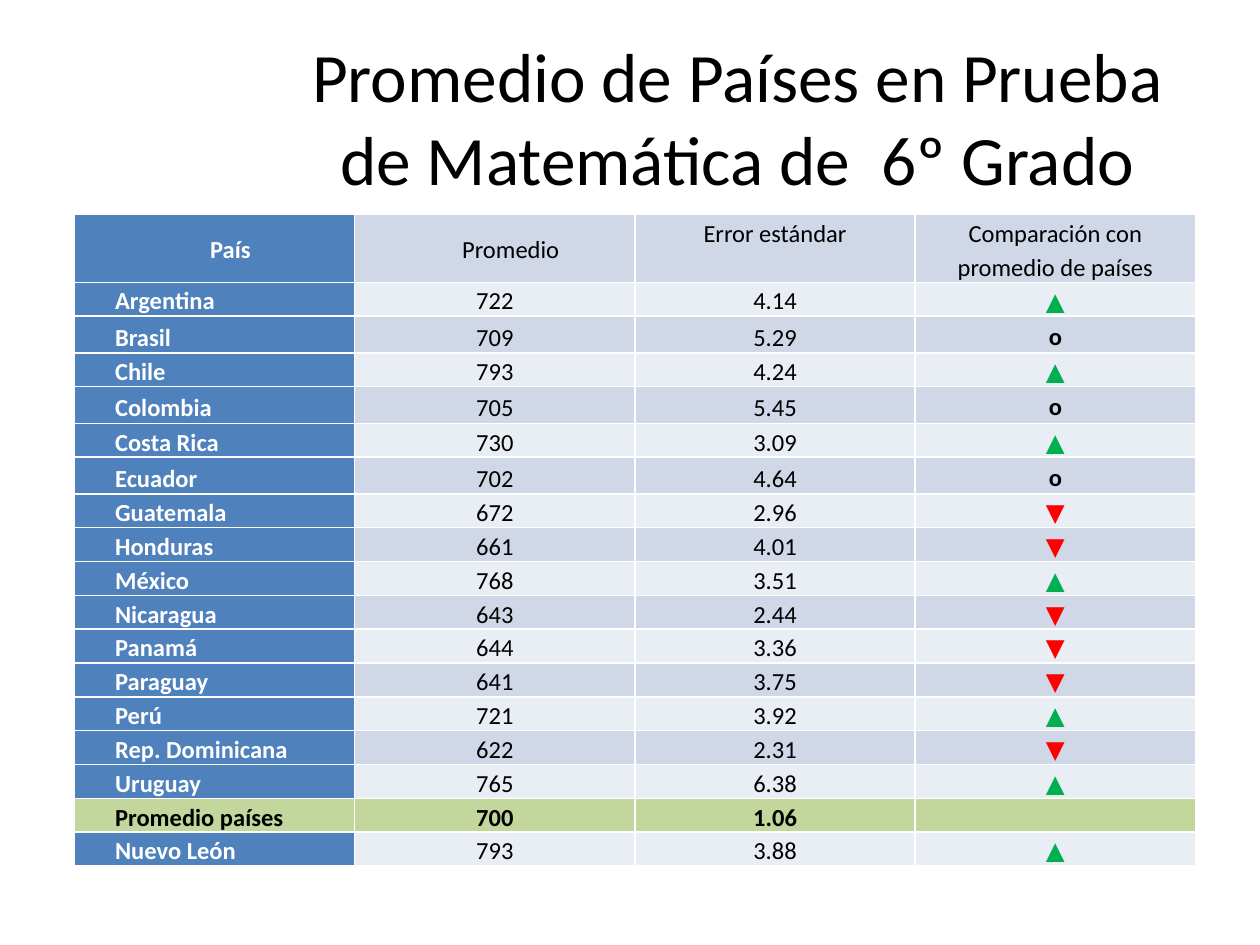
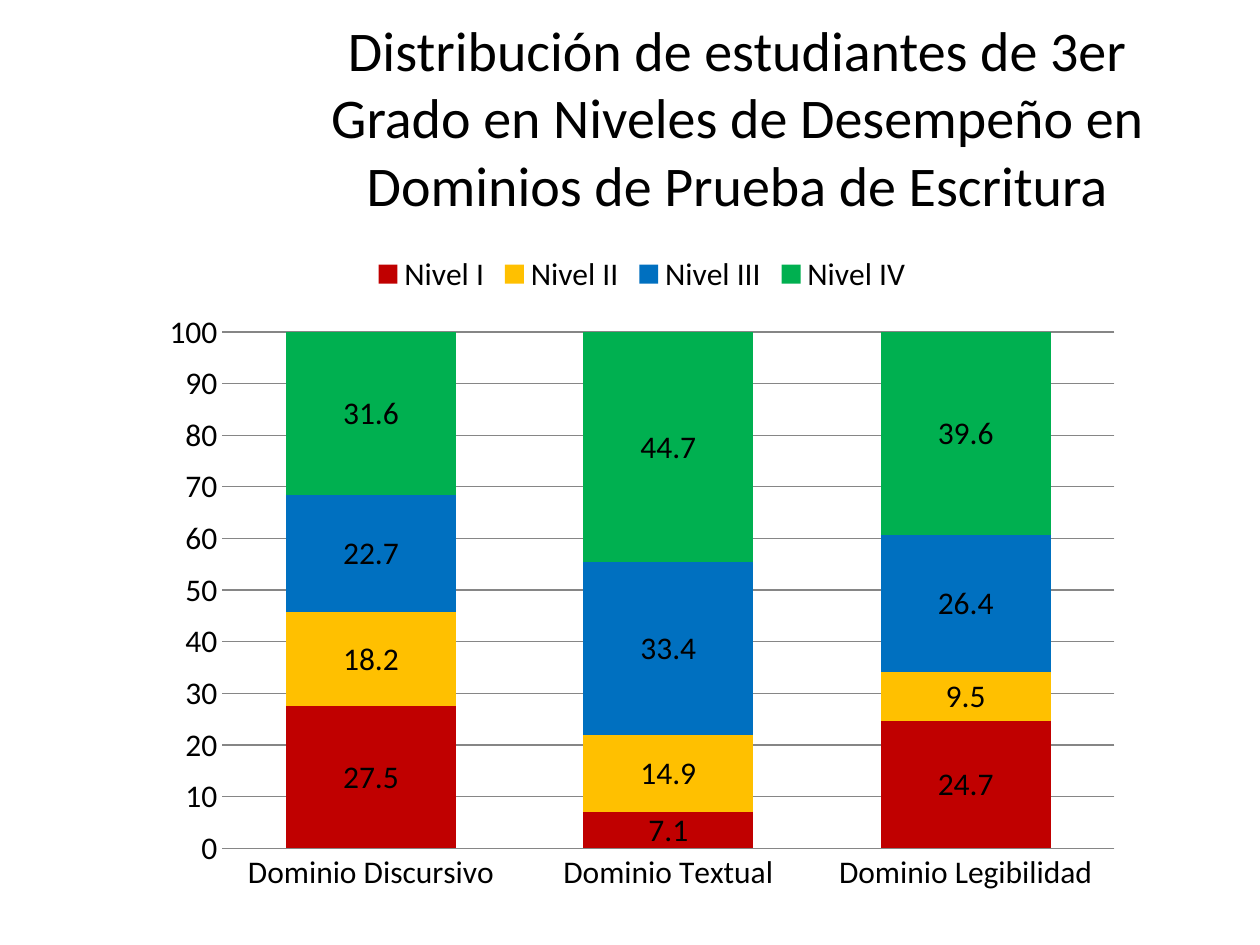
from lxml import etree
from pptx import Presentation
from pptx import util as u
from pptx.chart.data import CategoryChartData
from pptx.dml.color import RGBColor
from pptx.enum import chart as ch
from pptx.enum import text
from pptx.oxml.ns import qn

THEME = dict(
    font="Calibri", black="000000", white="FFFFFF", grid="868686",
    head="4F81BD", band_dark="D0D8E8", band_light="E9EDF4", total="C3D69B",
    up="00B050", down="FF0000",
    levels=["C00000", "FFC000", "0070C0", "00B050"],
    title_sz=39.6, long_title_sz=32, table_sz=14, chart_sz=18,
)
SYMBOL_COLORS = {"▲": THEME["up"], "▼": THEME["down"]}
TOP, MIDDLE, BOTTOM = (text.MSO_ANCHOR.TOP, text.MSO_ANCHOR.MIDDLE,
                       text.MSO_ANCHOR.BOTTOM)


def set_font(font, size, color, bold=False):
    formats = dict(name=THEME["font"], size=u.Pt(size), bold=bold)
    for name, value in formats.items():
        setattr(font, name, value)
    font.color.rgb = RGBColor.from_string(color)


def add_titled_slide(prs, title, size):
    s = prs.slides.add_slide(prs.slide_layouts[6])
    tf = s.shapes.add_textbox(u.Cm(5.61), u.Cm(0.76), u.Cm(18.52), u.Cm(3.18)).text_frame
    formats = dict(word_wrap=True, vertical_anchor=MIDDLE)
    for name, value in formats.items():
        setattr(tf, name, value)
    p = tf.paragraphs[0]
    p.alignment = text.PP_ALIGN.CENTER
    r = p.add_run()
    r.text = title
    set_font(r.font, size, THEME["black"])
    return s


prs = Presentation()
prs.slide_width, prs.slide_height = u.Cm(25.4), u.Cm(19.05)

# Country averages
s = add_titled_slide(prs, "Promedio de Países en Prueba de Matemática de  6º Grado",
                     THEME["title_sz"])
TOTAL_NAME = "Promedio países"
rows = [
    ("País", "Promedio", "Error estándar", "Comparación con promedio de países"),
    ("Argentina", "722", "4.14", "▲"),
    ("Brasil", "709", "5.29", "o"),
    ("Chile", "793", "4.24", "▲"),
    ("Colombia", "705", "5.45", "o"),
    ("Costa Rica", "730", "3.09", "▲"),
    ("Ecuador", "702", "4.64", "o"),
    ("Guatemala", "672", "2.96", "▼"),
    ("Honduras", "661", "4.01", "▼"),
    ("México", "768", "3.51", "▲"),
    ("Nicaragua", "643", "2.44", "▼"),
    ("Panamá", "644", "3.36", "▼"),
    ("Paraguay", "641", "3.75", "▼"),
    ("Perú", "721", "3.92", "▲"),
    ("Rep. Dominicana", "622", "2.31", "▼"),
    ("Uruguay", "765", "6.38", "▲"),
    (TOTAL_NAME, "700", "1.06", ""),
    ("Nuevo León", "793", "3.88", "▲"),
]
heights = [1.37] + [0.74 if row[3] == "o" else 0.66 for row in rows[1:]]
table = s.shapes.add_table(len(rows), 4, u.Cm(1.5), u.Cm(4.32),
                           u.Cm(22.6), u.Cm(sum(heights))).table
table.first_row = table.horz_banding = False
for column in table.columns:
    column.width = u.Cm(5.65)

for i, row in enumerate(rows):
    table.rows[i].height = u.Cm(heights[i])
    is_header, is_total = i == 0, row[0] == TOTAL_NAME
    for j, value in enumerate(row):
        cell = table.cell(i, j)
        if is_header:
            anchor = TOP if j == 2 else MIDDLE
        else:
            anchor = MIDDLE if j == 3 or (j == 0 and i >= len(rows) - 2) else BOTTOM
        formats = dict(margin_left=u.Cm(0.18), margin_right=u.Cm(0.18),
                       margin_top=0, margin_bottom=0, vertical_anchor=anchor)
        for name, setting in formats.items():
            setattr(cell, name, setting)

        tc_pr = cell._tc.get_or_add_tcPr()
        for side in ("a:lnL", "a:lnR", "a:lnT", "a:lnB"):
            line = etree.SubElement(tc_pr, qn(side), w=str(u.Pt(1)))
            fill = etree.SubElement(line, qn("a:solidFill"))
            etree.SubElement(fill, qn("a:srgbClr"), val=THEME["white"])
        if is_total:
            color = THEME["total"]
        elif j == 0:
            color = THEME["head"]
        else:
            color = THEME["band_light" if i % 2 else "band_dark"]
        cell.fill.solid()
        cell.fill.fore_color.rgb = RGBColor.from_string(color)

        p = cell.text_frame.paragraphs[0]
        p.line_spacing = 1.15
        if j == 0 or (is_header and j == 1):
            p_pr = p._p.get_or_add_pPr()
            p_pr.set("marL", str(u.Cm(0.64)))
            p_pr.set("indent", "0")
        if j or is_header:
            p.alignment = text.PP_ALIGN.CENTER
        if value:
            r = p.add_run()
            r.text = value
            plain = THEME["white" if j == 0 and not is_total else "black"]
            set_font(r.font, THEME["table_sz"], SYMBOL_COLORS.get(value, plain),
                     j == 0 or is_total or value == "o")
        else:
            etree.SubElement(p._p, qn("a:endParaRPr"), sz=str(THEME["table_sz"] * 100))

# Writing levels
s = add_titled_slide(prs, "Distribución de estudiantes de 3er Grado en Niveles de "
                     "Desempeño en Dominios de Prueba de Escritura",
                     THEME["long_title_sz"])
data = CategoryChartData()
data.categories = ["Dominio Discursivo", "Dominio Textual", "Dominio Legibilidad"]
data.add_series("Nivel I", (27.5, 7.1, 24.7))
data.add_series("Nivel II", (18.2, 14.9, 9.5))
data.add_series("Nivel III", (22.7, 33.4, 26.4))
data.add_series("Nivel IV", (31.6, 44.7, 39.6))
chart = s.shapes.add_chart(ch.XL_CHART_TYPE.COLUMN_STACKED, u.Cm(3.02), u.Cm(4.83),
                           u.Cm(19.84), u.Cm(13.41), data).chart
set_font(chart.font, THEME["chart_sz"], THEME["black"])
chart.has_title = False
chart.has_legend = True
chart.legend.position = ch.XL_LEGEND_POSITION.TOP
chart.legend.include_in_layout = False

plot = chart.plots[0]
formats = dict(gap_width=75, overlap=100, vary_by_categories=False)
for name, value in formats.items():
    setattr(plot, name, value)
for series, color in zip(plot.series, THEME["levels"]):
    series.format.fill.solid()
    series.format.fill.fore_color.rgb = RGBColor.from_string(color)
    labels = series.data_labels
    labels.show_value = True
    labels.position = ch.XL_LABEL_POSITION.CENTER
    set_font(labels.font, THEME["chart_sz"], THEME["black"])

levels = chart.value_axis
formats = dict(minimum_scale=0, maximum_scale=100, major_unit=10, has_major_gridlines=True)
for name, value in formats.items():
    setattr(levels, name, value)
levels.format.line.fill.background()
for axis in (levels, chart.category_axis):
    axis.major_tick_mark = axis.minor_tick_mark = ch.XL_TICK_MARK.NONE
for line in (levels.major_gridlines.format.line, chart.category_axis.format.line):
    line.width = u.Pt(0.75)
    line.color.rgb = RGBColor.from_string(THEME["grid"])

prs.save("out.pptx")
